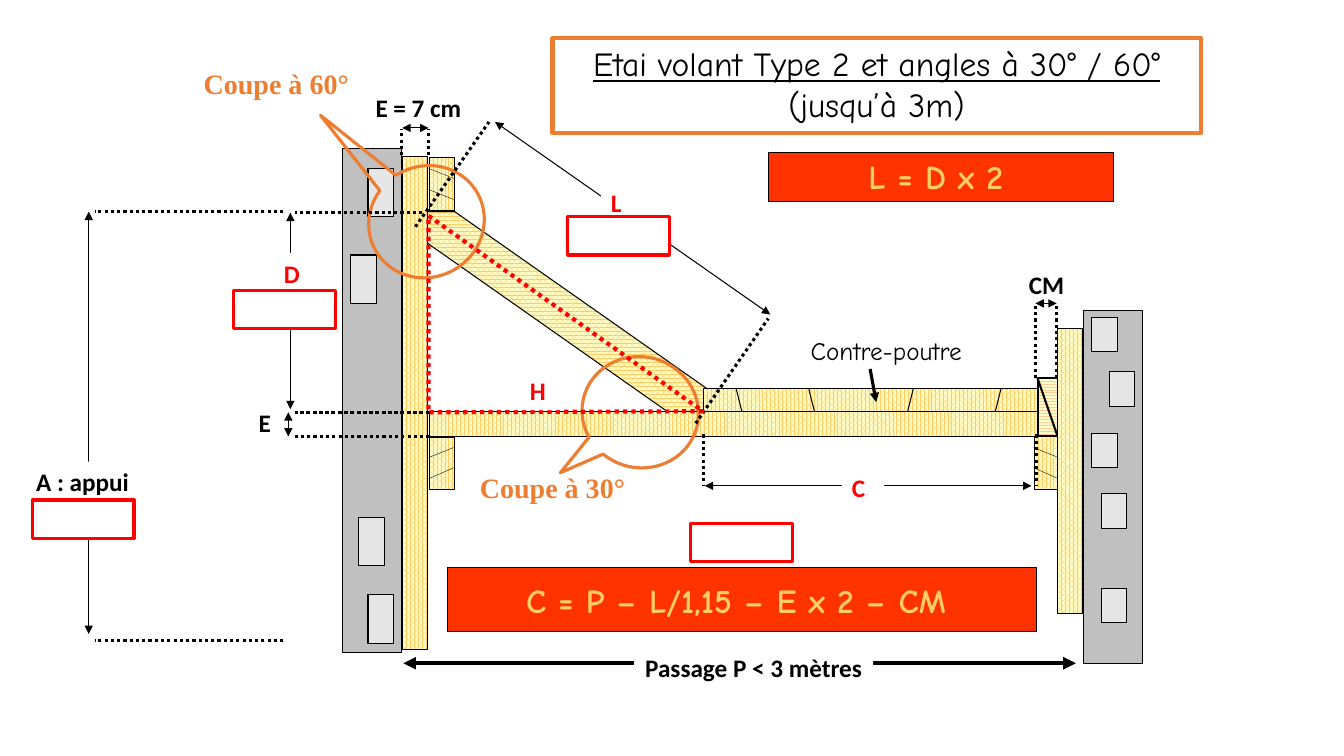
from dataclasses import dataclass

from lxml import etree
from pptx import Presentation
from pptx.dml.color import RGBColor
from pptx.enum.dml import MSO_LINE, MSO_PATTERN
from pptx.enum.shapes import MSO_CONNECTOR, MSO_SHAPE
from pptx.enum.text import MSO_ANCHOR, PP_ALIGN
from pptx.oxml.ns import qn
from pptx.util import Inches, Pt

RECTANGLE = MSO_SHAPE.RECTANGLE
CALLOUT = MSO_SHAPE.OVAL_CALLOUT
STRAIGHT = MSO_CONNECTOR.STRAIGHT
DOTTED = MSO_LINE.ROUND_DOT
SPECKLED = MSO_PATTERN.PERCENT_75
ZIGZAG = MSO_PATTERN.ZIG_ZAG
LEFT, CENTER = PP_ALIGN.LEFT, PP_ALIGN.CENTER
TOP, MIDDLE = MSO_ANCHOR.TOP, MSO_ANCHOR.MIDDLE

BLACK, WHITE, RED = "000000", "FFFFFF", "FF0000"
ORANGE, AMBER, CREAM = "ED7D31", "FFCC66", "FFFFCC"
WALL_GREY, STONE_GREY, FORMULA_RED = "C0C0C0", "E7E6E6", "FF3300"
HAND_FONT, LABEL_FONT, CUT_FONT = "Comic Neue", "Calibri", "Times New Roman"

Point = tuple[float, float]
Box = tuple[float, float, float, float]


@dataclass
class Wall:
    box: Box
    stone_height: float
    stones: list[Point]


@dataclass
class Dimension:
    """A double arrow between two dotted guide lines."""
    arrow: tuple[Point, Point]
    guides: list[tuple[Point, Point]]


@dataclass
class Chock:
    box: Box
    rotation: int
    grain: list[tuple[Point, Point]]


@dataclass
class Label:
    text: str
    box: Box
    color: str = BLACK
    fill: str | None = None
    align: PP_ALIGN = CENTER
    wrap: bool = True


CHOCKS = [
    Chock((10.12, 4.47, 0.52, 0.25), 90,
          [((10.5, 4.54), (10.25, 4.44)), ((10.5, 4.75), (10.25, 4.64))]),
    Chock((4.12, 4.47, 0.52, 0.25), 270,
          [((4.25, 4.54), (4.5, 4.44)), ((4.25, 4.75), (4.5, 4.64))]),
    Chock((4.12, 1.7, 0.52, 0.25), 90,
          [((4.25, 1.88), (4.5, 1.98)), ((4.25, 1.67), (4.5, 1.77))]),
]
WALLS = [
    Wall((10.75, 3.08, 0.58, 3.5), 0.34,
         [(10.92, 5.84), (10.92, 4.9), (10.83, 4.3), (11, 3.69), (10.83, 3.15)]),
    Wall((3.4, 1.47, 0.58, 5), 0.48,
         [(3.65, 1.67), (3.56, 5.13), (3.65, 5.9), (3.48, 2.53)]),
]
DIMENSIONS = [
    Dimension(((2.88, 4.06), (2.88, 2.11)),
              [((4.19, y), (2.93, y)) for y in (2.11, 4.09)]),
    Dimension(((0.88, 6.29), (0.88, 2.1)),
              [((2.81, y), (0.94, y)) for y in (2.1, 6.35)]),
    Dimension(((2.86, 4.33), (2.86, 4.09)),
              [((4.26, y), (2.9, y)) for y in (4.09, 4.33)]),
    Dimension(((4.91, 1.21), (7.64, 3.12)),
              [((6.9, 4.2), (7.62, 3.16)), ((4.12, 2.25), (4.85, 1.21))]),
    Dimension(((3.99, 1.27), (4.25, 1.27)),
              [((x, 1.54), (x, 1.28)) for x in (3.98, 4.25)]),
    Dimension(((10.23, 4.82), (6.99, 4.82)),
              [((x, 4.31), (x, 4.81)) for x in (6.98, 10.28)]),
    Dimension(((10.27, 3.01), (10.48, 3.01)),
              [((x, 3.75), (x, 3.04)) for x in (10.27, 10.48)]),
]
LABELS = [
    Label("Passage P < 3 mètres", (6.29, 6.42, 2.37, 0.4), fill=WHITE, wrap=False),
    Label("A : appui", (0.26, 4.58, 1.32, 0.4), fill=WHITE, align=LEFT),
    Label("E", (2.37, 3.99, 0.51, 0.4)),
    Label("D", (2.64, 2.51, 0.51, 0.4), RED, WHITE),
    Label("L", (5.96, 1.81, 0.42, 0.4), RED, WHITE, LEFT),
    Label("E = 7 cm", (3.51, 0.87, 1.28, 0.4)),
    Label("C", (8.35, 4.64, 0.42, 0.4), RED, WHITE, LEFT),
    Label("H", (5.08, 3.67, 0.51, 0.4), RED, WHITE),
    Label("CM", (10.03, 2.62, 0.7, 0.4)),
]
VALUE_BOXES = [(5.63, 2.15), (2.32, 2.88), (0.32, 4.96), (6.85, 5.19)]

presentation = Presentation()
presentation.slide_width, presentation.slide_height = Inches(13.33), Inches(7.5)
slide = presentation.slides.add_slide(presentation.slide_layouts[6])


def rgb(value: str) -> RGBColor:
    return RGBColor.from_string(value)


def style(shape, fill: str | None = None, line: str | None = BLACK, width: float = 0.75,
          pattern=None, dash=None) -> None:
    """Set fill and outline; a pattern draws the fill colour on cream."""
    shape.shadow.inherit = False
    if pattern:
        shape.fill.patterned()
        shape.fill.pattern = pattern
        shape.fill.fore_color.rgb, shape.fill.back_color.rgb = rgb(fill), rgb(CREAM)
    elif fill:
        shape.fill.solid()
        shape.fill.fore_color.rgb = rgb(fill)
    else:
        shape.fill.background()
    if line:
        shape.line.color.rgb = rgb(line)
        shape.line.width = Pt(width)
        shape.line.dash_style = dash
    else:
        shape.line.fill.background()


def add_block(box: Box, kind=RECTANGLE, rotation: float = 0, **look):
    shape = slide.shapes.add_shape(kind, *map(Inches, box))
    shape.rotation = rotation
    style(shape, **look)
    return shape


def add_wood(box: Box, rotation: float = 0) -> None:
    add_block(box, rotation=rotation, fill=AMBER, pattern=SPECKLED)


def add_outline(points: list[Point], **look) -> None:
    corners = [(Inches(x), Inches(y)) for x, y in points]
    builder = slide.shapes.build_freeform(*corners[0])
    builder.add_line_segments(corners[1:], close=True)
    style(builder.convert_to_shape(), **look)


def add_line(start: Point, end: Point, width: float = 0.75, dash=None,
             arrows: tuple[str, ...] = ()) -> None:
    """Arrows names the ends that get a head: headEnd, tailEnd."""
    line = slide.shapes.add_connector(STRAIGHT, *map(Inches, start + end))
    line.line.color.rgb = rgb(BLACK)
    line.line.width = Pt(width)
    line.line.dash_style = dash
    for name in arrows:
        etree.SubElement(line.line._get_or_add_ln(), qn(f"a:{name}"), type="triangle")
    etree.SubElement(line._element.spPr, qn("a:effectLst"))


def add_text(text: str, box: Box, *, size: float = 18, font: str = LABEL_FONT,
             color: str = BLACK, bold: bool = True, fill: str | None = None,
             line: str | None = None, width: float = 0.75, align=CENTER, anchor=TOP,
             wrap: bool = False, underline_first: bool = False) -> None:
    shape = slide.shapes.add_textbox(*map(Inches, box))
    style(shape, fill, line, width)
    frame = shape.text_frame
    frame.word_wrap, frame.vertical_anchor = wrap, anchor
    frame.text = text
    for index, paragraph in enumerate(frame.paragraphs):
        paragraph.alignment = align
        run_font = paragraph.runs[0].font
        run_font.name, run_font.size, run_font.bold = font, Pt(size), bold
        run_font.color.rgb = rgb(color)
        run_font.underline = underline_first and index == 0


def add_formula(text: str, panel: Box, box: Box) -> None:
    add_block(panel, fill=FORMULA_RED)
    add_text(text, box, size=24, font=HAND_FONT, color=AMBER, anchor=MIDDLE)


def add_dimension(dimension: Dimension) -> None:
    add_line(*dimension.arrow, arrows=("headEnd", "tailEnd"))
    for guide in dimension.guides:
        add_line(*guide, width=2.25, dash=DOTTED)


def main() -> None:
    add_outline([(4.15, 2.35), (4.15, 2.1), (4.51, 2.1), (7.06, 3.89), (7.06, 4.14),
                 (6.7, 4.14)], fill=AMBER, pattern=SPECKLED)
    add_wood((8.53, 2.3, 0.25, 3.35), 270)
    for top, bottom in [(7.3, 7.36), (8.02, 8.08), (9.06, 9), (9.93, 9.87)]:
        add_line((top, 3.85), (bottom, 4.09))
    for chock in CHOCKS:
        add_wood(chock.box, chock.rotation)
        for grain in chock.grain:
            add_line(*grain, width=0.25)
    add_text("Etai volant Type 2 et angles à 30° / 60°\n(jusqu’à 3m)",
             (5.48, 0.38, 6.43, 0.94), size=24, font=HAND_FONT, bold=False,
             line=ORANGE, width=3, wrap=True, underline_first=True)
    for wall in WALLS:
        add_block(wall.box, fill=WALL_GREY)
        for stone in wall.stones:
            add_block((*stone, 0.25, wall.stone_height), fill=STONE_GREY)
    add_wood((7.17, 1.17, 0.25, 6.08), 270)
    add_block((10.1, 3.94, 0.58, 0.2), rotation=90, fill="FFCC99", pattern=ZIGZAG, width=1.5)
    add_line((10.49, 4.33), (10.29, 3.75), width=1.5)
    for post in [(3.99, 1.55, 0.25, 4.89), (10.49, 3.26, 0.25, 2.83)]:
        add_wood(post)

    for text, text_box, bubble, rotation, tip in [
        ("Coupe à 60°", (1.92, 0.61, 1.64, 0.43), (3.68, 1.62, 1.1, 1.16), 61.4, (-1.3, 0.36)),
        ("Coupe à 30°", (4.66, 4.62, 1.64, 0.43), (5.8, 3.51, 1.1, 1.16), 105.6, (0.72, 0.52)),
    ]:
        add_text(text, text_box, size=20, font=CUT_FONT, color=ORANGE)
        callout = add_block(bubble, CALLOUT, rotation, line=ORANGE, width=2.25)
        callout.adjustments[0], callout.adjustments[1] = tip

    add_line((4, 6.58), (10.67, 6.58), width=3, arrows=("headEnd", "tailEnd"))
    for dimension in DIMENSIONS:
        add_dimension(dimension)
    add_outline([(4.25, 2.14), (6.97, 4.08), (4.25, 4.09)], line=RED, width=3, dash=DOTTED)
    for label in LABELS:
        add_text(label.text, label.box, color=label.color, fill=label.fill,
                 align=label.align, wrap=label.wrap)
    for corner in VALUE_BOXES:
        add_block((*corner, 1.01, 0.38), fill=WHITE, line=RED, width=2.25)
    add_text("Contre-poutre", (7.85, 3.28, 1.88, 0.4), font=HAND_FONT, bold=False)
    add_line((8.63, 3.66), (8.69, 3.99), width=2.25, arrows=("tailEnd",))
    add_formula("L = D x 2", (7.62, 1.51, 3.42, 0.49), (8.37, 1.5, 1.82, 0.5))
    add_formula("C = P – L/1,15 – E x 2 – CM", (4.44, 5.63, 5.84, 0.64), (4.83, 5.7, 4.94, 0.5))
    presentation.save("out.pptx")


if __name__ == "__main__":
    main()
